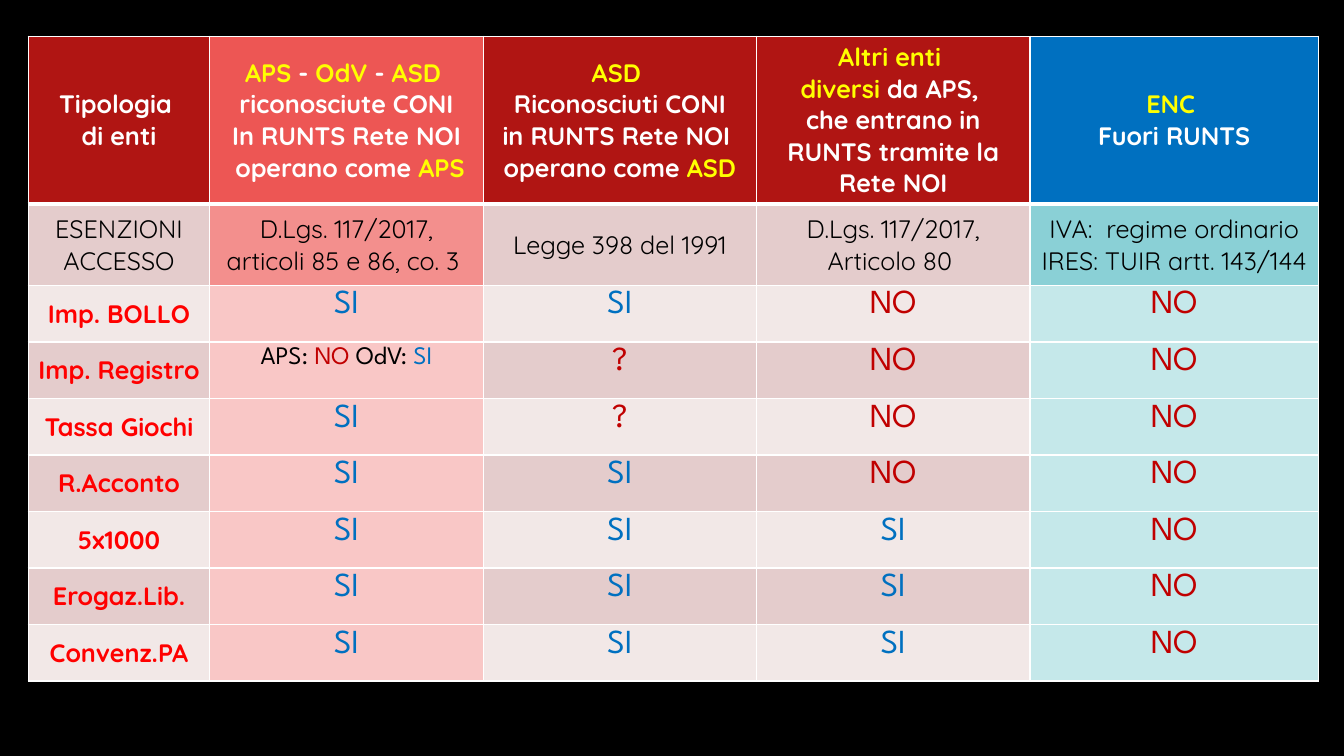
from pptx import Presentation
from pptx.dml.color import RGBColor as RGB
from pptx.enum.text import MSO_ANCHOR as Anchor, PP_ALIGN as Align
from pptx.oxml import parse_xml
from pptx.oxml.ns import nsdecls
from pptx.util import Inches, Pt

WIDE, HIGH = Inches(13.33), Inches(7.5)
BLACK = RGB(0x00, 0x00, 0x00)
WHITE = RGB(0xFF, 0xFF, 0xFF)
YELLOW = RGB(0xFF, 0xFF, 0x00)
RED = RGB(0xFF, 0x00, 0x00)
DARK = RGB(0xC0, 0x00, 0x00)
BLUE = RGB(0x00, 0x70, 0xC0)
BRICK = RGB(0xB0, 0x15, 0x13)
CORAL = RGB(0xED, 0x56, 0x54)
SALMON = RGB(0xF3, 0x8F, 0x8D)
PINK = RGB(0xF9, 0xC7, 0xC6)
ROSE = RGB(0xE4, 0xCC, 0xCC)
PALE = RGB(0xF2, 0xE8, 0xE7)
TEAL = RGB(0x8A, 0xD0, 0xD6)
AQUA = RGB(0xC5, 0xE8, 0xEA)

COLS = [1.8, 2.71, 2.71, 2.71, 2.86]
ROWS = [1.34, 0.76] + [0.53] * 7

TITLE = {"name": "Quicksand", "size": Pt(18), "bold": True}
PLAIN = {"name": "Quicksand", "size": Pt(18), "bold": False}
MARK = {"name": "League Spartan", "size": Pt(24), "bold": False}
SMALL = {"name": "League Spartan", "size": Pt(18), "bold": False}

# A cell is a list of paragraphs, a paragraph a list of (text, colour) runs.
HEADS = [
    [[("Tipologia ", WHITE)], [("di enti", WHITE)]],
    [[("APS", YELLOW), (" - ", WHITE), ("OdV", YELLOW), (" - ", WHITE),
      ("ASD ", YELLOW)],
     [("riconosciute CONI", WHITE)],
     [("In RUNTS Rete NOI", WHITE)],
     [(" operano come ", WHITE), ("APS", YELLOW)]],
    [[("ASD ", YELLOW)],
     [("Riconosciuti CONI", WHITE)],
     [("in RUNTS Rete NOI ", WHITE)],
     [("operano come ", WHITE), ("ASD", YELLOW)]],
    [[("Altri enti ", YELLOW)],
     [("diversi ", YELLOW), ("da APS, ", WHITE)],
     [("che entrano in RUNTS tramite la Rete NOI", WHITE)]],
    [[("ENC ", YELLOW)], [("Fuori RUNTS", WHITE)]],
]
LAWS = [
    ["ESENZIONI", "ACCESSO"],
    ["D.Lgs. 117/2017, articoli 85 e 86, co. 3 "],
    ["Legge 398 del 1991"],
    ["D.Lgs. 117/2017, Articolo 80 "],
    ["IVA:  regime ordinario", "IRES: TUIR artt. 143/144 "],
]
SPLIT = [[("APS: ", BLACK), ("NO", DARK), (" OdV: ", BLACK), ("SI", BLUE)]]
TAXES = [
    ("Imp. BOLLO", "SI", "SI", "NO", "NO"),
    ("Imp. Registro", SPLIT, "?", "NO", "NO"),
    ("Tassa Giochi", "SI", "?", "NO", "NO"),
    ("R.Acconto", "SI", "SI", "NO", "NO"),
    ("5x1000", "SI", "SI", "SI", "NO"),
    ("Erogaz.Lib.", "SI", "SI", "SI", "NO"),
    ("Convenz.PA", "SI", "SI", "SI", "NO"),
]
HEAD_FILLS = [BRICK, CORAL, BRICK, BRICK, BLUE]
LAW_FILLS = [ROSE, SALMON, ROSE, ROSE, TEAL]


def edge(cell, **widths):
    """Draw white cell borders; widths in points by side."""
    props = cell._tc.get_or_add_tcPr()
    for side in "LRTB":
        props.append(parse_xml(
            f'<a:ln{side} {nsdecls("a")} w="{Pt(widths.get(side, 1))}">'
            f'<a:solidFill><a:srgbClr val="{WHITE}"/></a:solidFill></a:ln{side}>'))


def write(cell, lines, style, fill, anchor=Anchor.MIDDLE):
    cell.fill.solid()
    cell.fill.fore_color.rgb = fill
    cell.vertical_anchor = anchor
    frame = cell.text_frame
    for num, line in enumerate(lines):
        para = frame.add_paragraph() if num else frame.paragraphs[0]
        para.alignment = Align.CENTER
        for text, tint in line:
            run = para.add_run()
            run.text = text
            for key, value in style.items():
                setattr(run.font, key, value)
            run.font.color.rgb = tint


def fill_head(cells):
    for cell, lines, fill in zip(cells, HEADS, HEAD_FILLS):
        edge(cell, B=3)
        write(cell, lines, TITLE, fill)


def fill_laws(cells):
    for cell, lines, fill in zip(cells, LAWS, LAW_FILLS):
        edge(cell, T=3)
        write(cell, [[(text, BLACK)] for text in lines], PLAIN, fill)


def fill_tax(cells, tax, band):
    fills = [band, PINK, band, band, AQUA]
    for col, (cell, item, fill) in enumerate(zip(cells, tax, fills)):
        edge(cell)
        if col == 0:
            write(cell, [[(item, RED)]], TITLE, fill)
        elif item is SPLIT:
            write(cell, item, SMALL, fill, Anchor.TOP)
        else:
            tint = BLUE if item == "SI" else DARK
            write(cell, [[(item, tint)]], MARK, fill, Anchor.TOP)


def add_grid(slide, left, top, width, height):
    """Place the table of exemptions in the given box."""
    grid = slide.shapes.add_table(
        len(ROWS), len(COLS), left, top, width, height).table
    for col, part in zip(grid.columns, COLS):
        col.width = int(width * part / sum(COLS))
    for row, part in zip(grid.rows, ROWS):
        row.height = int(height * part / sum(ROWS))
    head, laws, *rest = [row.cells for row in grid.rows]
    fill_head(head)
    fill_laws(laws)
    for num, (cells, tax) in enumerate(zip(rest, TAXES)):
        fill_tax(cells, tax, ROSE if num % 2 else PALE)


def main():
    deck = Presentation()
    deck.slide_width, deck.slide_height = WIDE, HIGH
    slide = deck.slides.add_slide(deck.slide_layouts[6])
    back = slide.background.fill
    back.solid()
    back.fore_color.rgb = BLACK
    add_grid(slide, Inches(0.28), Inches(0.36), int(WIDE * 0.96), int(HIGH * 0.82))
    deck.save("out.pptx")


if __name__ == "__main__":
    main()
